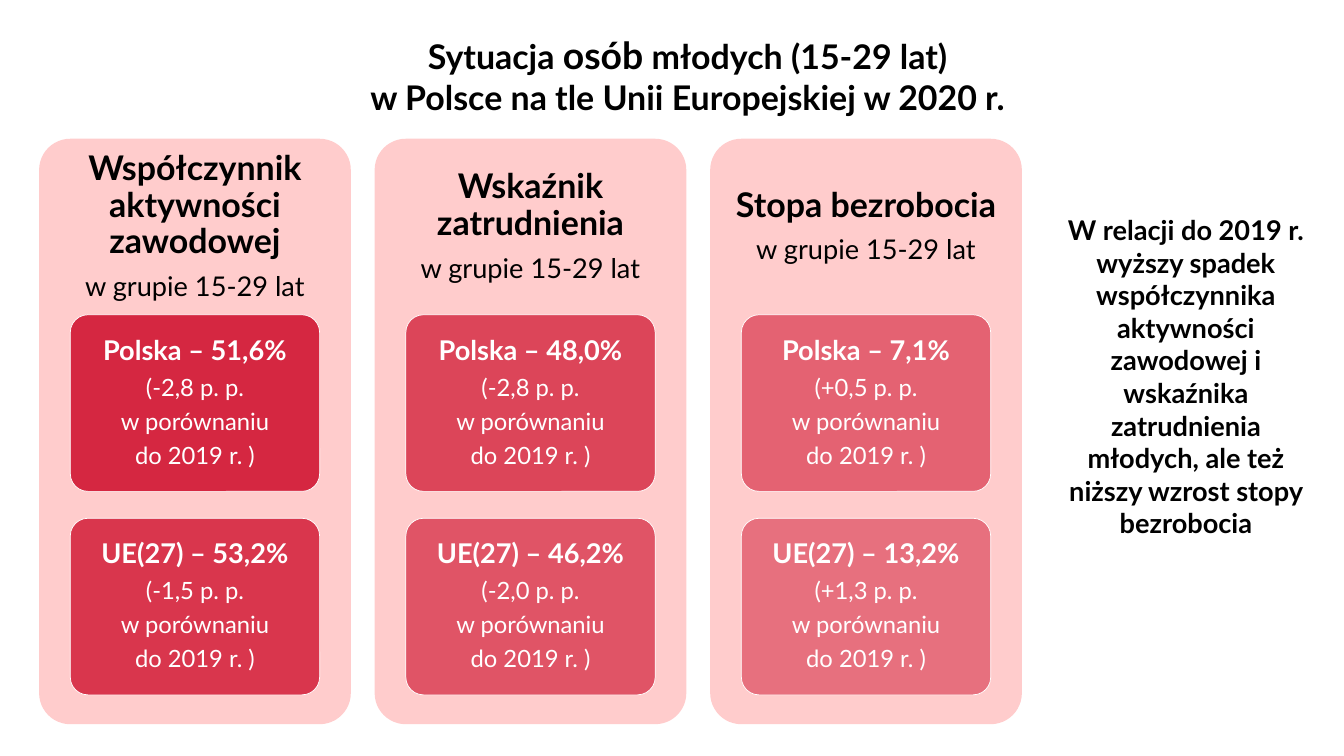
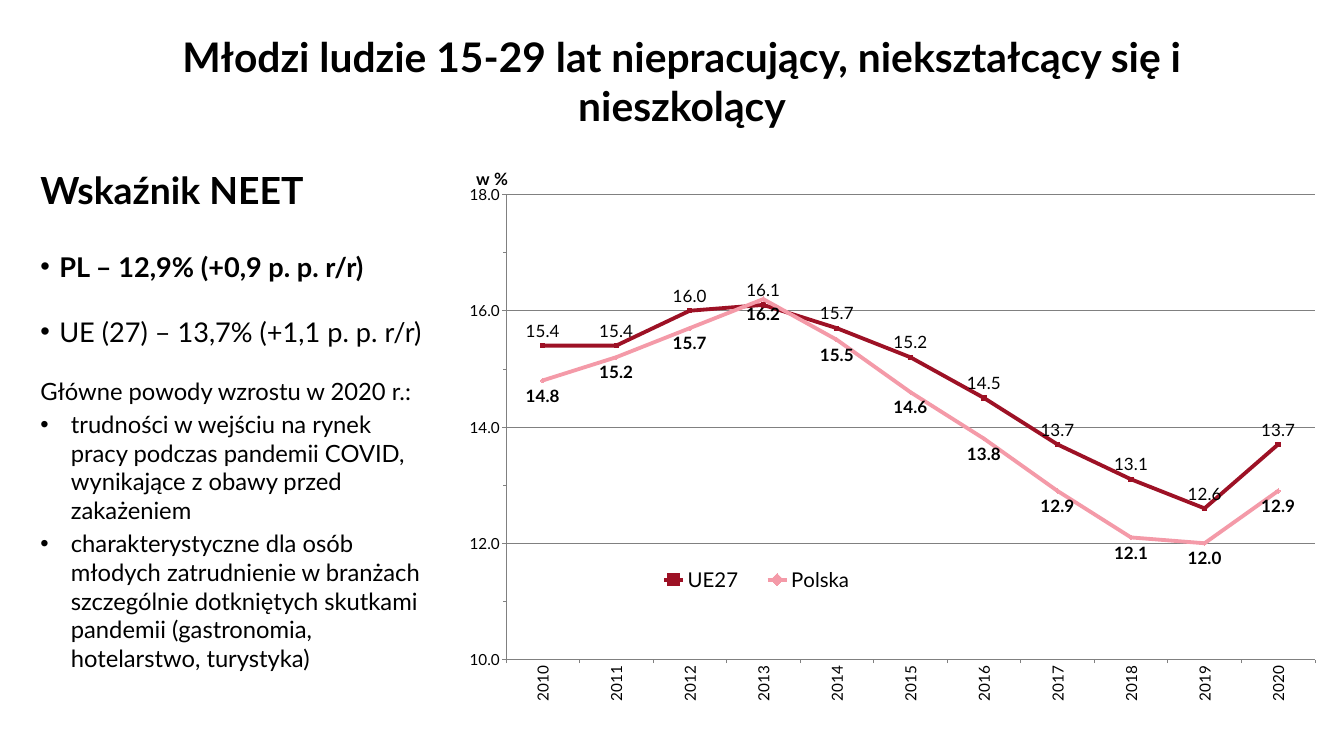
from lxml import etree
from pptx import Presentation
from pptx.chart.data import CategoryChartData
from pptx.dml.color import RGBColor
from pptx.enum.chart import (XL_CHART_TYPE as CHART, XL_LABEL_POSITION as LABEL,
                             XL_LEGEND_POSITION as LEGEND, XL_MARKER_STYLE as MARKER,
                             XL_TICK_MARK as TICK)
from pptx.enum.shapes import MSO_SHAPE as SHAPE
from pptx.enum.text import MSO_ANCHOR as ANCHOR, MSO_AUTO_SIZE as AUTOSIZE, PP_ALIGN as ALIGN
from pptx.oxml.ns import qn
from pptx.util import Inches, Pt

# Shared style
FONT = "Lato"
COLORS = {"black": "000000", "white": "FFFFFF", "panel": "FFCCCC", "card": "D11632",
          "grid": "808080", "ue": "9D1125", "poland": "F49AA8"}
RGB = {name: RGBColor.from_string(value) for name, value in COLORS.items()}


def set_frame(frame, left=0, top=0, right=0, bottom=0, anchor=ANCHOR.TOP):
    style = {"margin_left": Inches(left), "margin_top": Inches(top),
             "margin_right": Inches(right), "margin_bottom": Inches(bottom),
             "vertical_anchor": anchor, "word_wrap": True, "auto_size": AUTOSIZE.NONE}
    for key, value in style.items():
        setattr(frame, key, value)


def write(paragraph, text, size, bold=False, color="black", **layout):
    for key, value in layout.items():
        setattr(paragraph, key, value)
    run = paragraph.add_run()
    run.text = text
    for key, value in {"name": FONT, "size": Pt(size), "bold": bold}.items():
        setattr(run.font, key, value)
    run.font.color.rgb = RGB[color]


prs = Presentation()
prs.slide_width, prs.slide_height = Inches(21.99), Inches(12.37)
situation = prs.slides.add_slide(prs.slide_layouts[5])
neet = prs.slides.add_slide(prs.slide_layouts[1])

# Titles: each line is a list of (text, size)
titles = [
    (situation, (2.16, 0.52, 18.18, 1.58),
     [[("Sytuacja ", 40), ("osób", 44), (" młodych (15-29 lat)", 40)],
      [("w Polsce na tle Unii Europejskiej w 2020 r.", 40)]]),
    (neet, (2.72, 0.52, 16.88, 1.2),
     [[("Młodzi ludzie 15-29 lat niepracujący, niekształcący się i nieszkolący", 48)]]),
]
for slide, box, lines in titles:
    title = slide.shapes.title
    title.left, title.top, title.width, title.height = map(Inches, box)
    set_frame(title.text_frame)
    heading = title.text_frame.paragraphs[0]
    for number, line in enumerate(lines):
        if number:
            heading.add_line_break()
        for text, size in line:
            write(heading, text, size, bold=True, alignment=ALIGN.CENTER)

# Slide 1: three indicator panels, each with a card for Poland and one for the EU
indicators = [
    ("Współczynnik aktywności zawodowej",
     [("Polska – 51,6%", "(-2,8 p. p."), ("UE(27) – 53,2%", "(-1,5 p. p.")]),
    ("Wskaźnik zatrudnienia",
     [("Polska – 48,0%", "(-2,8 p. p."), ("UE(27) – 46,2%", "(-2,0 p. p.")]),
    ("Stopa bezrobocia",
     [("Polska – 7,1%", "(+0,5 p. p."), ("UE(27) – 13,2%", "(+1,3 p. p.")]),
]
for column, (indicator, regions) in enumerate(indicators):
    panel_left = 0.64 + 5.49 * column
    blocks = [((panel_left, 2.27, 5.1, 9.58), "panel", "black", 100, (0, 0, 0, 6.7),
               [(indicator, 40), ("w grupie 15-29 lat", 32)])]
    for row, (rate, change) in enumerate(regions):
        blocks.append(((panel_left + 0.51, 5.15 + 3.33 * row, 4.08, 2.89), "card", "white",
                       90 - 8 * (2 * column + row), (0.09, 0.07, 0.09, 0.07),
                       [(rate, 32), (change, 28), ("w porównaniu", 28), ("do 2019 r. )", 28)]))
    for box, fill, ink, opacity, margins, lines in blocks:
        block = situation.shapes.add_shape(SHAPE.ROUNDED_RECTANGLE, *map(Inches, box))
        block.adjustments[0] = 0.1
        block.shadow.inherit = False
        block.fill.solid()
        block.fill.fore_color.rgb = RGB[fill]
        if fill == "card":
            block.line.color.rgb = RGB["white"]
            block.line.width = Pt(0.85)
            shade = block.fill._xPr.find(qn("a:solidFill"))[0]
            etree.SubElement(shade, qn("a:alpha"), val=str(opacity * 1000))
        else:
            block.line.fill.background()
        set_frame(block.text_frame, *margins, anchor=ANCHOR.MIDDLE)
        for number, (text, size) in enumerate(lines):
            paragraph = (block.text_frame.add_paragraph() if number
                         else block.text_frame.paragraphs[0])
            write(paragraph, text, size, bold=number == 0, color=ink, alignment=ALIGN.CENTER,
                  line_spacing=0.9, space_after=Pt(0.35 * size))

# Conclusion beside the panels
conclusion = situation.shapes.add_textbox(*map(Inches, (17.15, 3.44, 4.51, 5.49))).text_frame
set_frame(conclusion, 0.1, 0.05, 0.1, 0.05)
write(conclusion.paragraphs[0],
      "W relacji do 2019 r. wyższy spadek współczynnika aktywności zawodowej i wskaźnika "
      "zatrudnienia młodych, ale też niższy wzrost stopy bezrobocia",
      32, bold=True, alignment=ALIGN.CENTER)

# Slide 2: text, size, bold, bullet indent, line spacing, space before, space after
reasons = [
    ("Wskaźnik NEET", 44, True, 0, 1.0, 6, 6),
    ("PL – 12,9% (+0,9 p. p. r/r)", 32, True, 0.31, 2.0, 0, 0),
    ("UE (27) – 13,7% (+1,1 p. p. r/r)", 32, False, 0.31, 2.0, 0, 0),
    ("Główne powody wzrostu w 2020 r.:", 28, False, 0, 1.0, 33.6, 0),
    ("trudności w wejściu na rynek pracy podczas pandemii COVID, wynikające z obawy "
     "przed zakażeniem", 28, False, 0.5, 1.0, 6, 6),
    ("charakterystyczne dla osób młodych zatrudnienie w branżach szczególnie dotkniętych "
     "skutkami pandemii (gastronomia, hotelarstwo, turystyka)", 28, False, 0.5, 1.0, 0, 0),
]
body = neet.placeholders[1]
body.left, body.top, body.width, body.height = map(Inches, (0.66, 2.74, 6.33, 9.08))
set_frame(body.text_frame)
for number, (text, size, bold, indent, spacing, before, after) in enumerate(reasons):
    paragraph = body.text_frame.add_paragraph() if number else body.text_frame.paragraphs[0]
    write(paragraph, text, size, bold, alignment=ALIGN.LEFT, line_spacing=spacing,
          space_before=Pt(before), space_after=Pt(after))
    properties = paragraph._p.get_or_add_pPr()
    properties.set("marL", str(Inches(indent)))
    properties.set("indent", str(-Inches(indent)))
    if indent:
        etree.SubElement(properties, qn("a:buFont"), typeface="Arial")
        etree.SubElement(properties, qn("a:buChar"), char="•")
    else:
        etree.SubElement(properties, qn("a:buNone"))

# NEET rate chart
rates = CategoryChartData(number_format="#,##0.0")
rates.categories = [str(year) for year in range(2010, 2021)]
rates.add_series("UE27", (15.4, 15.4, 16, 16.1, 15.7, 15.2, 14.5, 13.7, 13.1, 12.6, 13.7))
rates.add_series("Polska", (14.8, 15.2, 15.7, 16.2, 15.5, 14.6, 13.8, 12.9, 12.1, 12, 12.9))
chart = neet.shapes.add_chart(CHART.LINE_MARKERS, *map(Inches, (7.16, 2.58, 14.5, 9.27)),
                              rates).chart
chart.has_title = False
chart.font.name, chart.font.size = FONT, Pt(14)
chart.font.color.rgb = RGB["black"]
chart.plots[0].vary_by_categories = False

# Series lines, markers and labels
series_styles = [("ue", MARKER.SQUARE, LABEL.ABOVE, False),
                 ("poland", MARKER.DIAMOND, LABEL.BELOW, True)]
for series, (color, marker, position, bold) in zip(chart.plots[0].series, series_styles):
    series.smooth = False
    series.format.line.color.rgb = RGB[color]
    series.format.line.width = Pt(4.5)
    series.marker.style, series.marker.size = marker, 5
    series.marker.format.fill.solid()
    series.marker.format.fill.fore_color.rgb = RGB[color]
    series.marker.format.line.color.rgb = RGB[color]
    labels = series.data_labels
    for key, value in {"show_value": True, "position": position, "number_format": "#,##0.0",
                       "number_format_is_linked": False}.items():
        setattr(labels, key, value)
    for key, value in {"name": FONT, "size": Pt(20), "bold": bold}.items():
        setattr(labels.font, key, value)
    labels.font.color.rgb = RGB["black"]

# Axes
years, percent = chart.category_axis, chart.value_axis
for axis in (years, percent):
    axis.major_tick_mark = TICK.OUTSIDE
    axis.tick_labels.font.size = Pt(18)
    axis.format.line.color.rgb = RGB["grid"]
for key, value in {"minimum_scale": 10, "maximum_scale": 18, "major_unit": 2, "minor_unit": 1,
                   "minor_tick_mark": TICK.OUTSIDE, "has_major_gridlines": True,
                   "has_title": True}.items():
    setattr(percent, key, value)
percent.major_gridlines.format.line.color.rgb = RGB["grid"]
percent.tick_labels.number_format = "#,##0.0"
percent.tick_labels.number_format_is_linked = False
write(percent.axis_title.text_frame.paragraphs[0], "w %", 20, bold=True)
percent.axis_title._element.find(".//" + qn("a:bodyPr")).set("rot", "0")
years._element.find(qn("c:txPr")).find(qn("a:bodyPr")).set("rot", "-5400000")

# Legend
chart.has_legend = True
chart.legend.position = LEGEND.BOTTOM
chart.legend.include_in_layout = False
chart.legend.font.size = Pt(24)

# Positions inside the chart, as shares of its size
plot_area = chart._chartSpace.find(".//" + qn("c:plotArea"))
areas = [
    (plot_area, 0, {"layoutTarget": "inner", "xMode": "edge", "yMode": "edge",
                    "x": 0.077, "y": 0.065, "w": 0.913, "h": 0.821}),
    (chart.legend._element, 1, {"xMode": "edge", "yMode": "edge",
                                "x": 0.23, "y": 0.71, "w": 0.26, "h": 0.07}),
    (percent.axis_title._element, 1, {"xMode": "edge", "yMode": "edge", "x": 0.04, "y": 0.01}),
]
for area, index, settings in areas:
    for old_layout in area.findall(qn("c:layout")):
        area.remove(old_layout)
    layout = etree.Element(qn("c:layout"))
    manual = etree.SubElement(layout, qn("c:manualLayout"))
    for key, value in settings.items():
        etree.SubElement(manual, qn("c:" + key), val=str(value))
    area.insert(index, layout)

prs.save("out.pptx")
